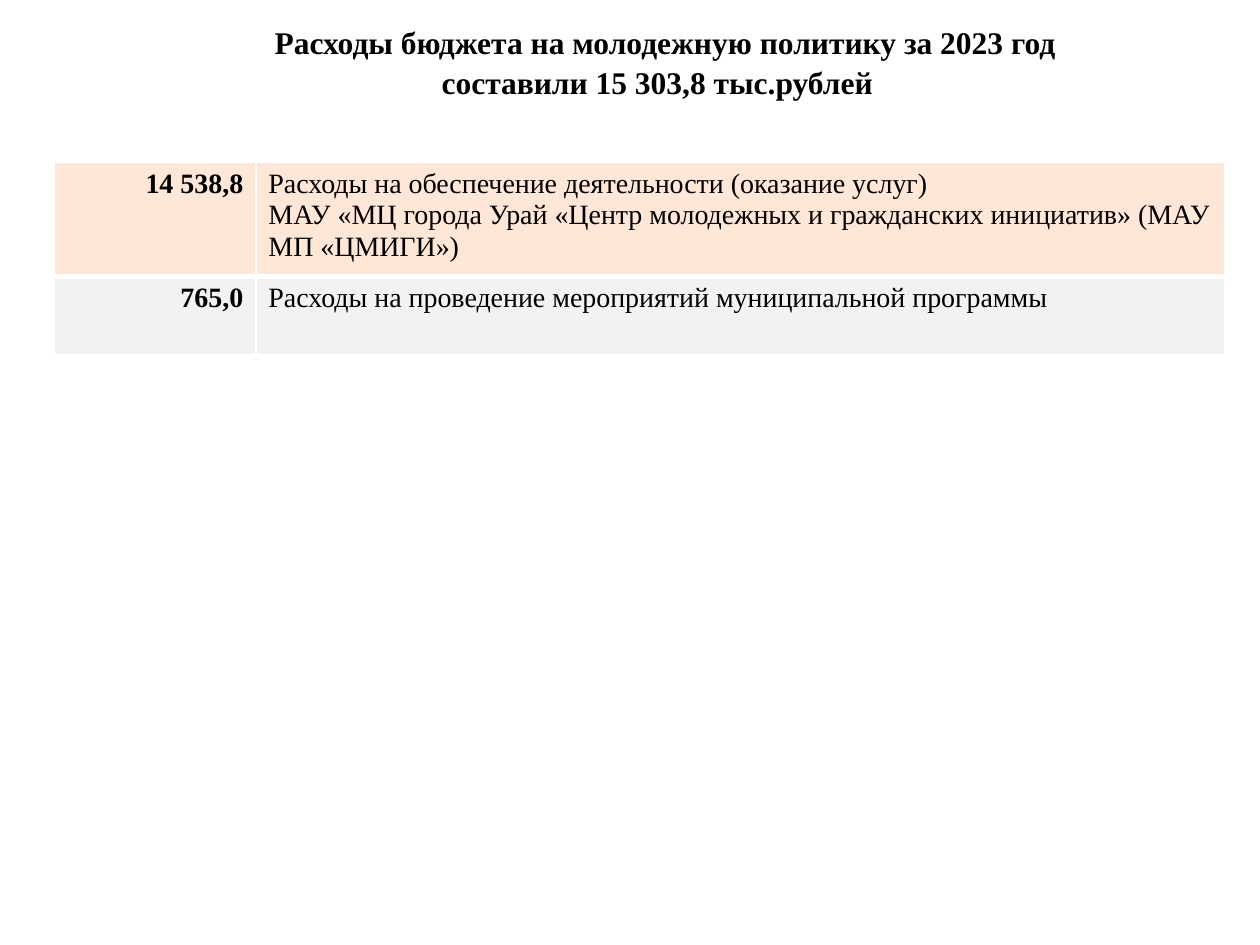
from lxml import etree
from pptx import Presentation
from pptx.dml.color import RGBColor
from pptx.enum import text
from pptx.oxml.ns import qn
from pptx.util import Pt

FONT = "Times New Roman"
BLACK = RGBColor(0x00, 0x00, 0x00)
WHITE = RGBColor(0xFF, 0xFF, 0xFF)
PEACH = RGBColor(0xFF, 0xE7, 0xD7)
GREY = RGBColor(0xF2, 0xF2, 0xF2)

TITLE = ["Расходы бюджета на молодежную политику за 2023 год",
         "составили 15 303,8 тыс.рублей"]
# amount, description lines, fill, row height, bottom border width
EXPENSES = [
    ("14 538,8",
     ["Расходы на обеспечение деятельности (оказание услуг)",
      "МАУ «МЦ города Урай «Центр молодежных и гражданских инициатив» "
      "(МАУ МП «ЦМИГИ»)"],
     PEACH, 65, 3),
    ("765,0",
     ["Расходы на проведение мероприятий муниципальной программы"],
     GREY, 45, 1),
]


def write(tf, lines, size=16, bold=False, align=text.PP_ALIGN.LEFT, before=0):
    for i, line in enumerate(lines):
        p = tf.paragraphs[0] if i == 0 else tf.add_paragraph()
        p.alignment = align
        p.line_spacing = 1.0
        p.space_before = Pt(before)
        r = p.add_run()
        r.text = line
        r.font.name = FONT
        r.font.size = Pt(size)
        r.font.bold = bold
        r.font.color.rgb = BLACK


def set_borders(cell, bottom):
    tc_pr = cell._tc.get_or_add_tcPr()
    for side, width in (("L", 1), ("R", 1), ("T", 1), ("B", bottom)):
        ln = etree.SubElement(tc_pr, qn(f"a:ln{side}"), w=str(Pt(width)))
        fill = etree.SubElement(ln, qn("a:solidFill"))
        etree.SubElement(fill, qn("a:srgbClr"), val=str(WHITE))


def add_title(s, x, y, w, h):
    sp = s.shapes.title
    sp.left, sp.top, sp.width, sp.height = Pt(x), Pt(y), Pt(w), Pt(h)
    tf = sp.text_frame
    tf.word_wrap = True
    tf.auto_size = text.MSO_AUTO_SIZE.NONE
    tf.vertical_anchor = text.MSO_ANCHOR.TOP
    write(tf, TITLE, size=18, bold=True, align=text.PP_ALIGN.CENTER, before=1.2)
    # The second line sits slightly left of centre
    tf.paragraphs[1]._p.get_or_add_pPr().set("marR", str(Pt(9)))


def add_expenses(s, x, y, w, amount_w):
    height = sum(row[3] for row in EXPENSES)
    table = s.shapes.add_table(len(EXPENSES), 2, Pt(x), Pt(y), Pt(w), Pt(height)).table
    table.first_row = False
    table.columns[0].width = Pt(amount_w)
    table.columns[1].width = Pt(w - amount_w)
    for i, (amount, lines, color, row_h, bottom) in enumerate(EXPENSES):
        table.rows[i].height = Pt(row_h)
        amount_cell, text_cell = table.cell(i, 0), table.cell(i, 1)
        for cell in (amount_cell, text_cell):
            set_borders(cell, bottom)
            cell.fill.solid()
            cell.fill.fore_color.rgb = color
        write(amount_cell.text_frame, [amount], bold=True, align=text.PP_ALIGN.RIGHT)
        write(text_cell.text_frame, lines)


def main():
    prs = Presentation()
    prs.slide_width, prs.slide_height = Pt(720), Pt(540)
    s = prs.slides.add_slide(prs.slide_layouts[5])
    add_title(s, 54, 9.4, 652.3, 51)
    add_expenses(s, 31, 92.9, 669, 115.2)
    prs.save("out.pptx")


if __name__ == "__main__":
    main()
